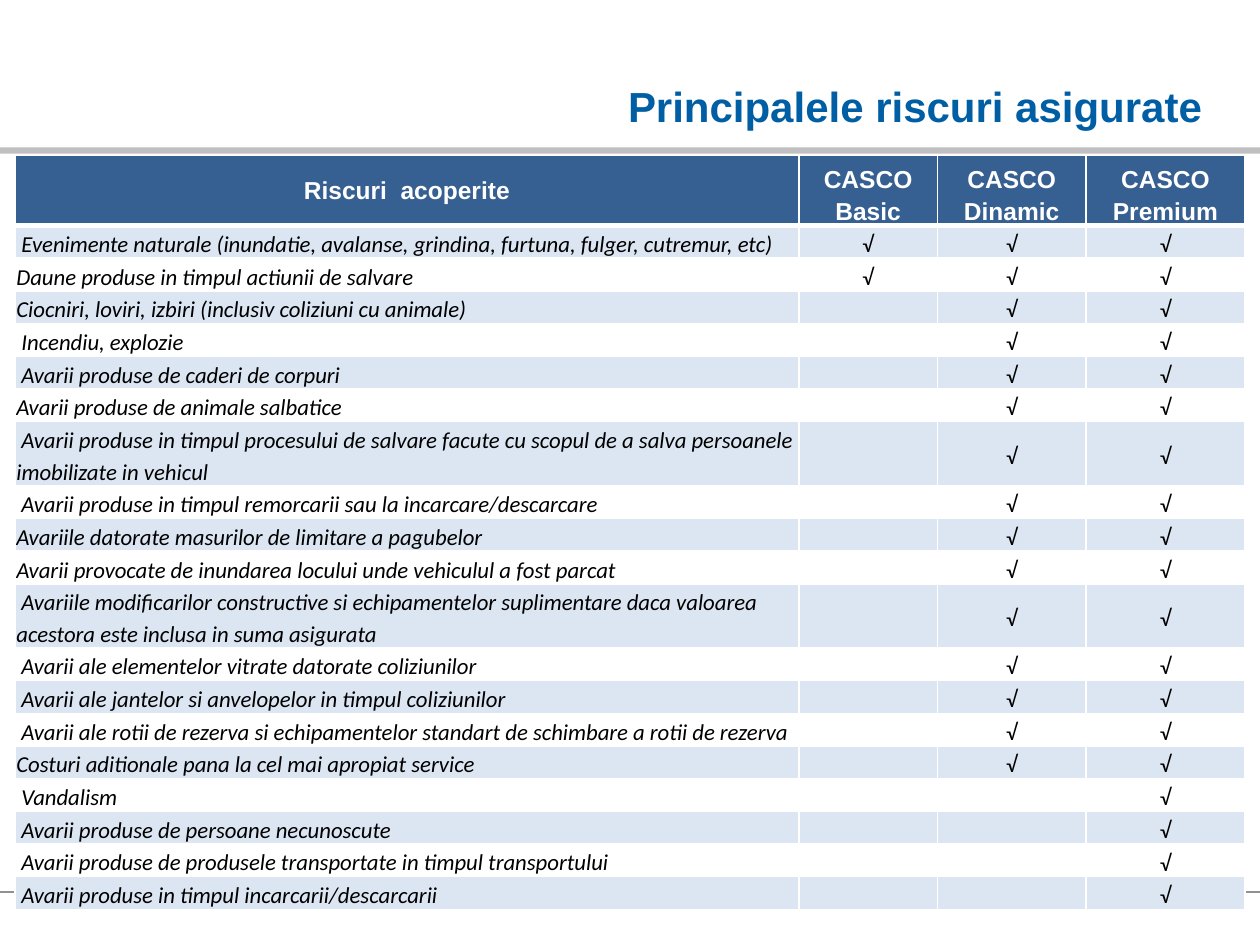
from lxml.etree import SubElement
from pptx import Presentation
from pptx.dml.color import RGBColor
from pptx.enum.shapes import MSO_CONNECTOR, MSO_SHAPE
from pptx.enum.text import MSO_ANCHOR, PP_ALIGN
from pptx.oxml import parse_xml
from pptx.oxml.ns import nsdecls, qn
from pptx.util import Inches, Pt

COLORS = {"title": "005EA4", "bar": "C0C0C0", "footer": "919191",
          "header": "376092", "band": "DCE6F2", "white": "FFFFFF", "text": "000000"}

TITLE = "Principalele riscuri asigurate"
HEADERS = ["Riscuri  acoperite", "CASCO Basic", "CASCO Dinamic", "CASCO Premium"]
# Each risk with the number of packages covering it, counted from Premium down
RISKS = [
    (" Evenimente naturale (inundatie, avalanse, grindina, furtuna, fulger, cutremur, etc)", 3),
    ("Daune produse in timpul actiunii de salvare", 3),
    ("Ciocniri, loviri, izbiri (inclusiv coliziuni cu animale)", 2),
    (" Incendiu, explozie", 2),
    (" Avarii produse de caderi de corpuri", 2),
    ("Avarii produse de animale salbatice", 2),
    (" Avarii produse in timpul procesului de salvare facute cu scopul de a salva "
     "persoanele imobilizate in vehicul", 2),
    (" Avarii produse in timpul remorcarii sau la incarcare/descarcare", 2),
    ("Avariile datorate masurilor de limitare a pagubelor", 2),
    ("Avarii provocate de inundarea locului unde vehiculul a fost parcat", 2),
    (" Avariile modificarilor constructive si echipamentelor suplimentare daca "
     "valoarea acestora este inclusa in suma asigurata", 2),
    (" Avarii ale elementelor vitrate datorate coliziunilor", 2),
    (" Avarii ale jantelor si anvelopelor in timpul coliziunilor", 2),
    (" Avarii ale rotii de rezerva si echipamentelor standart de schimbare a rotii de rezerva", 2),
    ("Costuri aditionale pana la cel mai apropiat service", 2),
    (" Vandalism", 1),
    (" Avarii produse de persoane necunoscute", 1),
    (" Avarii produse de produsele transportate in timpul transportului", 1),
    (" Avarii produse in timpul incarcarii/descarcarii", 1),
]
COL_WIDTHS = [6.22, 1.1, 1.18, 1.26]
HEADER_H, ROW_H, TALL_ROW_H = 0.56, 0.25, 0.46
LINE_CHARS = 90  # longer risks take two lines


def rgb(name):
    return RGBColor.from_string(COLORS[name])


def style_run(r, font, size, color, bold=False, italic=False):
    r.font.name, r.font.size = font, Pt(size)
    r.font.bold, r.font.italic = bold, italic
    r.font.color.rgb = rgb(color)


def set_borders(cell, bottom=1):
    tcPr = cell._tc.get_or_add_tcPr()
    for i, (side, width) in enumerate(zip("LRTB", (1, 1, 1, bottom))):
        tcPr.insert(i, parse_xml(
            f'<a:ln{side} {nsdecls("a")} w="{Pt(width)}"><a:solidFill>'
            f'<a:srgbClr val="{COLORS["white"]}"/></a:solidFill></a:ln{side}>'))


def fill_cell(cell, text, fill, align, anchor, spacing, font, bottom=1):
    cell.margin_left = cell.margin_right = cell.margin_top = Inches(0.01)
    cell.margin_bottom = 0
    cell.vertical_anchor = anchor
    cell.fill.solid()
    cell.fill.fore_color.rgb = rgb(fill)
    set_borders(cell, bottom)
    cell.text_frame.text = text
    p = cell.text_frame.paragraphs[0]
    p.alignment, p.line_spacing = align, spacing
    for r in p.runs:
        style_run(r, **font)
    if not text:  # keeps an empty cell from stretching its row
        SubElement(p._p, qn("a:endParaRPr")).set("sz", str(font["size"] * 100))


prs = Presentation()
prs.slide_width, prs.slide_height = Inches(10), Inches(7.5)
slide = prs.slides.add_slide(prs.slide_layouts[6])

# Bar under the title and footer line
bar = slide.shapes.add_shape(MSO_SHAPE.RECTANGLE, 0, Inches(1.17), prs.slide_width, Inches(0.05))
bar.shadow.inherit = False
bar.fill.solid()
bar.fill.fore_color.rgb = rgb("bar")
bar.line.fill.background()
footer = slide.shapes.add_connector(
    MSO_CONNECTOR.STRAIGHT, 0, Inches(7.08), prs.slide_width, Inches(7.08))
footer.line.color.rgb = rgb("footer")
footer.line.width = Pt(0.75)
SubElement(footer._element.spPr, qn("a:effectLst"))

# Title
tf = slide.shapes.add_textbox(Inches(1.14), Inches(0.35), Inches(8.5), Inches(0.74)).text_frame
tf.word_wrap = True
tf.vertical_anchor = MSO_ANCHOR.BOTTOM
tf.text = TITLE
tf.paragraphs[0].alignment = PP_ALIGN.RIGHT
style_run(tf.paragraphs[0].runs[0], "Arial", 24, "title", bold=True)

# Table grid
heights = [HEADER_H] + [TALL_ROW_H if len(risk) > LINE_CHARS else ROW_H for risk, _ in RISKS]
table = slide.shapes.add_table(
    len(heights), len(COL_WIDTHS), Inches(0.12), Inches(1.23),
    Inches(sum(COL_WIDTHS)), Inches(sum(heights))).table
table.horz_banding = False
for col, width in zip(table.columns, COL_WIDTHS):
    col.width = Inches(width)
for row, height in zip(table.rows, heights):
    row.height = Inches(height)

# Table content
header_font = dict(font="Arial", size=14, color="white", bold=True)
mark_font = dict(font="Calibri", size=13, color="text")
risk_font = dict(mark_font, italic=True)
for c, text in enumerate(HEADERS):
    fill_cell(table.cell(0, c), text, "header", PP_ALIGN.CENTER,
              MSO_ANCHOR.BOTTOM if c else MSO_ANCHOR.MIDDLE,
              1.15 if c else 1.0, header_font, bottom=3)
packages = len(HEADERS) - 1
for n, (risk, covered) in enumerate(RISKS, 1):
    fill = "band" if n % 2 else "white"
    fill_cell(table.cell(n, 0), risk, fill, PP_ALIGN.LEFT, MSO_ANCHOR.BOTTOM, 1.15, risk_font)
    for c in range(1, packages + 1):
        mark = "√" if c > packages - covered else ""
        fill_cell(table.cell(n, c), mark, fill, PP_ALIGN.CENTER,
                  MSO_ANCHOR.MIDDLE, 1.15, mark_font)

prs.save("out.pptx")
